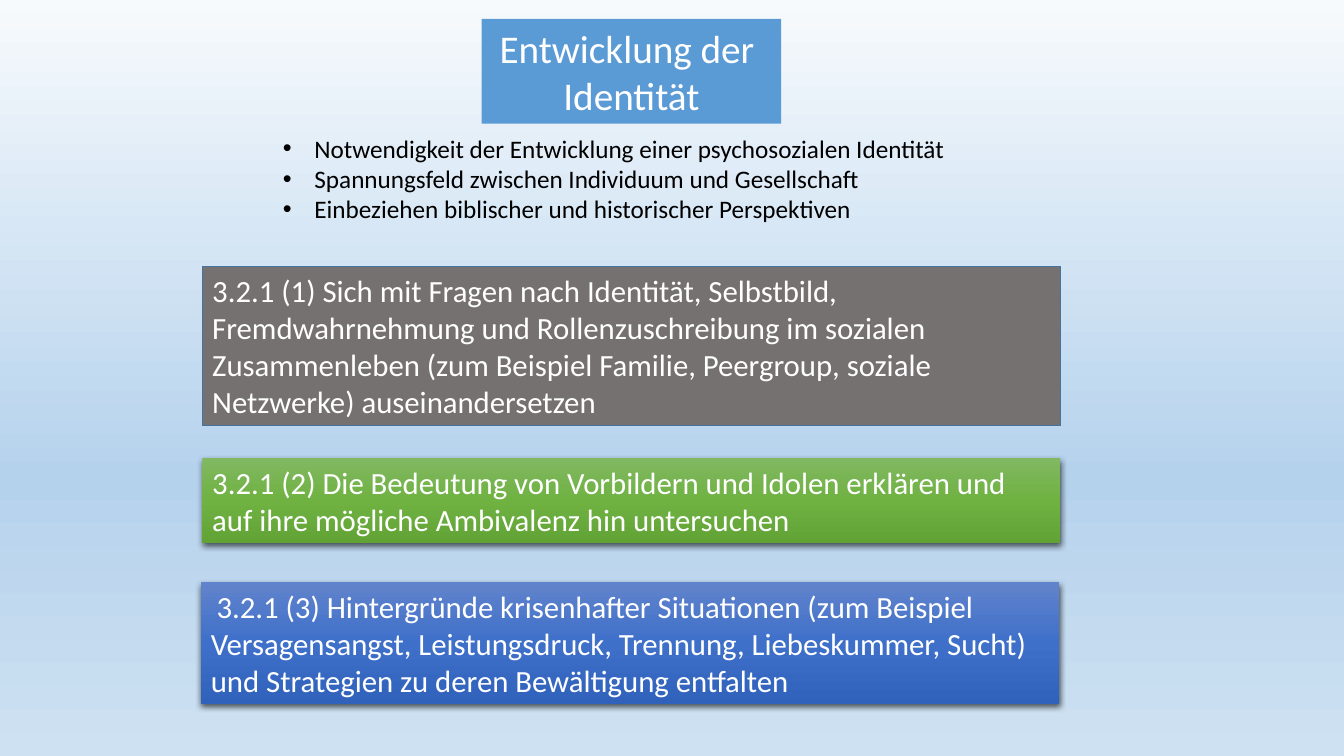
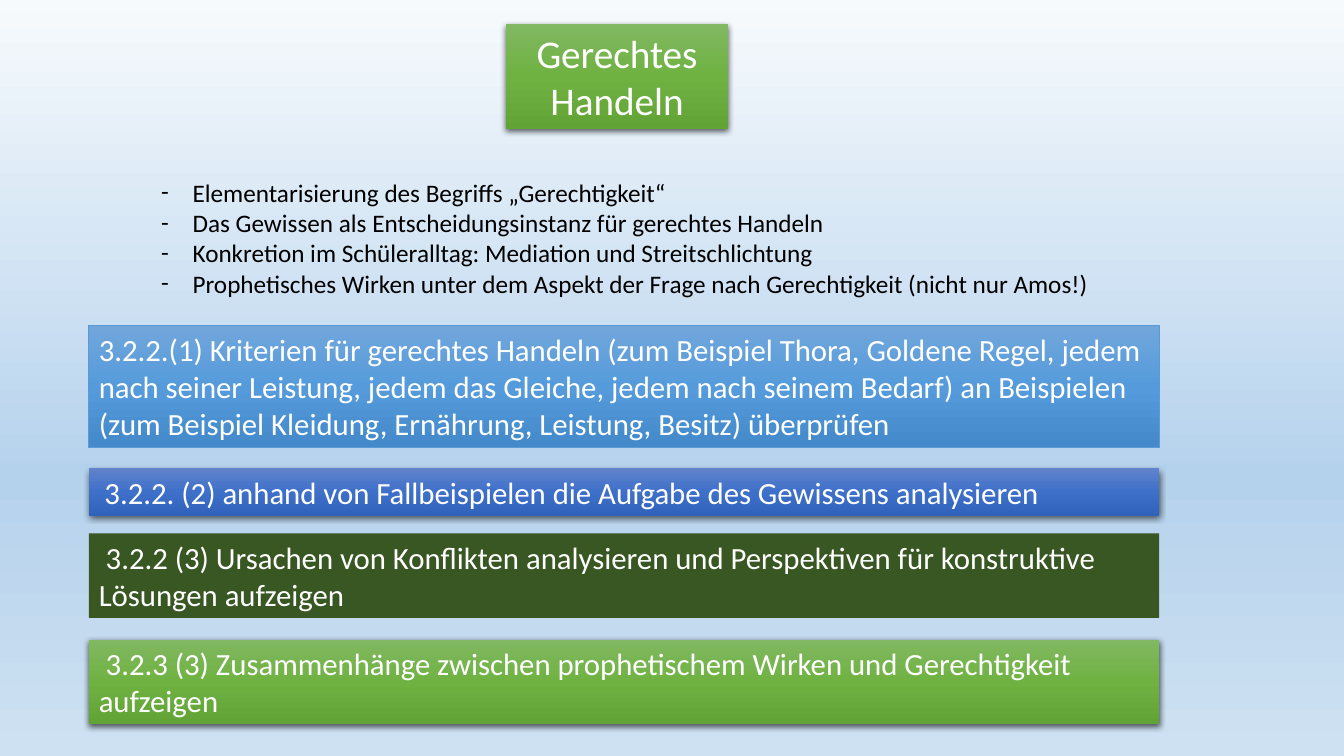
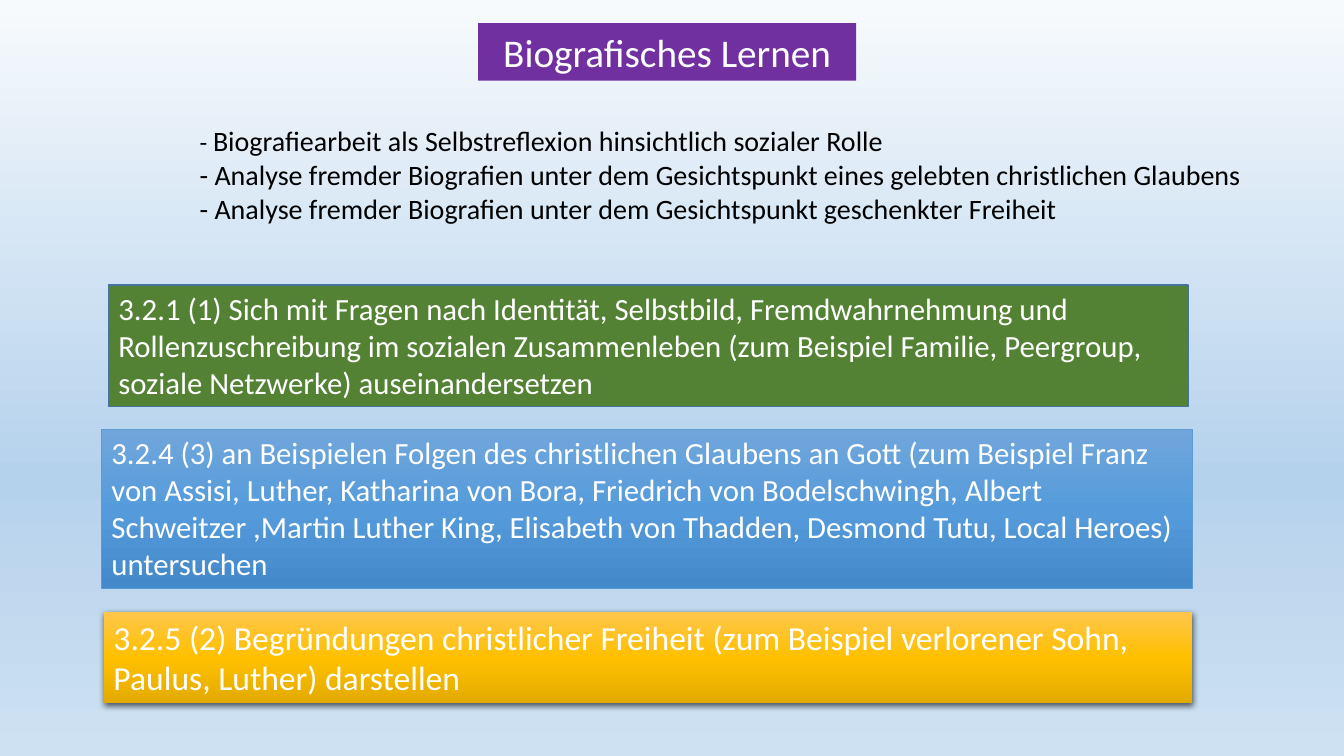
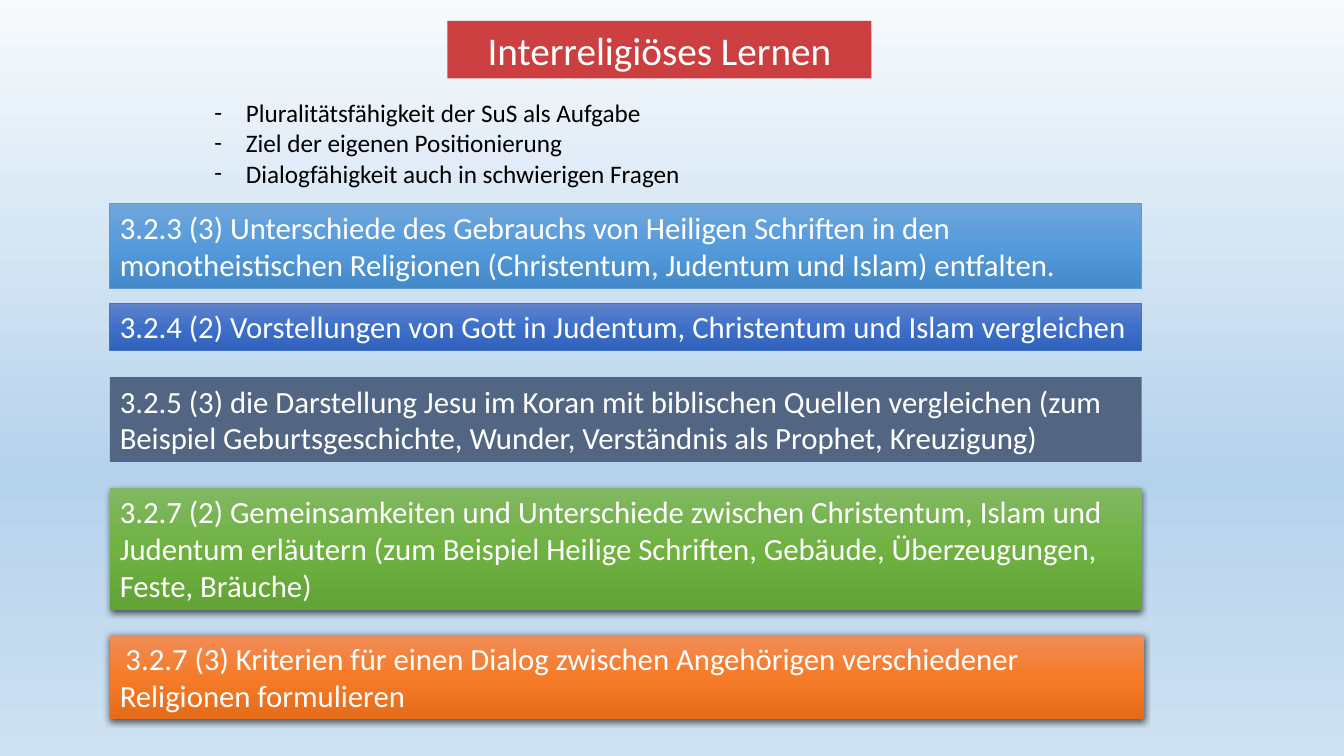
from lxml import etree
from pptx import Presentation
from pptx.dml.color import RGBColor
from pptx.enum.shapes import MSO_SHAPE as Shape
from pptx.enum.text import MSO_ANCHOR as Anchor, MSO_AUTO_SIZE as AutoSize, PP_ALIGN as Align
from pptx.oxml.ns import qn
from pptx.util import Pt

# Shared look
FONT, WHITE, BLACK = "Calibri", "FFFFFF", "000000"
TITLE_SIZE, BAND_SIZE, POINT_SIZE = 28, 22, 18
LINE_RATIO, PADDING, HANGING = 1.21, 7.2, 22.5
BACKGROUND = [(0, "F7FAFD"), (63, "B5D2EC"), (100, "CEE1F2")]
FRAME = {"word_wrap": True, "auto_size": AutoSize.SHAPE_TO_FIT_TEXT, "vertical_anchor": Anchor.TOP}


def gradient(top, middle, bottom):
    return [(0, top), (50, middle), (100, bottom)]


GREEN = {"fill": gradient("81B861", "6FB242", "62A336"), "shadow": True}
BLUE = {"fill": gradient("6183CB", "3E70CA", "3062BB"), "shadow": True}
FLAT_BLUE = {"fill": BLUE["fill"], "line": ("4472C4", 0.5)}
SKY = {"fill": gradient("71A6DB", "559BDB", "448ACA"), "line": ("5B9BD5", 0.5)}
GOLD = {"fill": gradient("FFC64B", "FFC000", "E3AB00"), "shadow": True}
ORANGE = {"fill": gradient("F18C57", "F67B28", "E56C19"), "shadow": True}
GREY = {"fill": "767171", "line": ("43739E", 1)}
LEAF = {"fill": "548235", "line": ("43739E", 1)}
FOREST, SLATE = {"fill": "385723"}, {"fill": "526582"}
AZURE, PURPLE = {"fill": "5B9BD5"}, {"fill": "7030A0"}
RED = {"fill": "C00000", "alpha": 74}


def color(value):
    return RGBColor.from_string(value)


def add_xml(parent, tag, **attributes):
    child = etree.SubElement(parent, qn(tag))
    for name, value in attributes.items():
        child.set(name, str(value))
    return child


def set_attributes(target, values):
    for name, value in values.items():
        setattr(target, name, value)


def text_height(lines, size):
    return lines * size * LINE_RATIO + PADDING


# Fills and shadow
def fill_gradient(fill, properties, stops):
    """Put a vertical gradient in place of the solid fill."""
    fill.solid()
    solid = properties.find(qn("a:solidFill"))
    element = etree.Element(qn("a:gradFill"), rotWithShape="1")
    stop_list = add_xml(element, "a:gsLst")
    for position, value in stops:
        stop = add_xml(stop_list, "a:gs", pos=position * 1000)
        add_xml(stop, "a:srgbClr", val=value)
    add_xml(element, "a:lin", ang=90 * 60000, scaled=0)
    properties.replace(solid, element)


def style_shape(shape, style):
    properties = shape._element.spPr
    if isinstance(style["fill"], list):
        fill_gradient(shape.fill, properties, style["fill"])
    else:
        shape.fill.solid()
        shape.fill.fore_color.rgb = color(style["fill"])
    if "alpha" in style:
        solid_color = properties.find(qn("a:solidFill"))[0]
        add_xml(solid_color, "a:alpha", val=style["alpha"] * 1000)
    if "line" in style:
        line_color, width = style["line"]
        shape.line.color.rgb = color(line_color)
        shape.line.width = Pt(width)
    else:
        shape.line.fill.background()
    shape.shadow.inherit = False
    if style.get("shadow"):
        shadow = add_xml(properties.find(qn("a:effectLst")), "a:outerShdw", blurRad=Pt(4.5),
                         dist=Pt(1.5), dir=90 * 60000, algn="ctr", rotWithShape=0)
        add_xml(add_xml(shadow, "a:srgbClr", val=BLACK), "a:alpha", val=63000)


# Text: a paragraph is a string or a list of (string, size) runs
def write_text(shape, paragraphs, size, text_color, align=Align.LEFT, bullet=None):
    frame = shape.text_frame
    set_attributes(frame, FRAME)
    for index, content in enumerate(paragraphs):
        paragraph = frame.add_paragraph() if index else frame.paragraphs[0]
        paragraph.alignment = align
        if bullet:
            properties = paragraph._p.get_or_add_pPr()
            properties.set("marL", str(Pt(HANGING)))
            properties.set("indent", str(-Pt(HANGING)))
            add_xml(properties, "a:buFont", typeface="Arial" if bullet == "•" else FONT)
            add_xml(properties, "a:buChar", char=bullet)
        runs = [(content, size)] if isinstance(content, str) else content
        for text, run_size in runs:
            run = paragraph.add_run()
            run.text = text
            set_attributes(run.font, {"name": FONT, "size": Pt(run_size)})
            run.font.color.rgb = color(text_color)


# Regions of a slide
def add_panel(slide, box, style, paragraphs, size, align=Align.LEFT):
    shape = slide.shapes.add_shape(Shape.RECTANGLE, *map(Pt, box))
    style_shape(shape, style)
    write_text(shape, paragraphs, size, WHITE, align)


def add_title(slide, left, top, width, style, paragraphs, lines=1):
    box = (left, top, width, text_height(lines, TITLE_SIZE))
    add_panel(slide, box, style, paragraphs, TITLE_SIZE, Align.CENTER)


def add_points(slide, left, top, width, paragraphs, bullet="-", size=POINT_SIZE):
    box = (left, top, width, text_height(len(paragraphs), size))
    shape = slide.shapes.add_textbox(*map(Pt, box))
    write_text(shape, paragraphs, size, BLACK, bullet=bullet)


def add_band(slide, left, top, width, lines, style, content, size=BAND_SIZE):
    add_panel(slide, (left, top, width, text_height(lines, size)), style, [content], size)


def spaced(text):
    """Lead in with a smaller space."""
    return [(" ", POINT_SIZE), (text, BAND_SIZE)]


# Slides
IDENTITY = ("3.2.1 (1) Sich mit Fragen nach Identität, Selbstbild, Fremdwahrnehmung und "
            "Rollenzuschreibung im sozialen Zusammenleben (zum Beispiel Familie, Peergroup, "
            "soziale Netzwerke) auseinandersetzen")

SLIDES = [
    {"title": (344, 13.5, 214, AZURE, ["Entwicklung der ", "Identität"], 2),
     "points": (195, 91.5, 508, [
         "Notwendigkeit der Entwicklung einer psychosozialen Identität",
         "Spannungsfeld zwischen Individuum und Gesellschaft",
         "Einbeziehen biblischer und historischer Perspektiven"], "•"),
     "bands": [
         (144.5, 190.5, 613, 4, GREY, IDENTITY),
         (144.5, 327.5, 613, 2, GREEN,
          "3.2.1 (2) Die Bedeutung von Vorbildern und Idolen erklären und auf ihre mögliche "
          "Ambivalenz hin untersuchen"),
         (143.5, 416, 613, 3, BLUE, spaced(
             "3.2.1 (3) Hintergründe krisenhafter Situationen (zum Beispiel Versagensangst, "
             "Leistungsdruck, Trennung, Liebeskummer, Sucht) und Strategien zu deren "
             "Bewältigung entfalten"))]},
    {"title": (361.5, 17.5, 158.5, GREEN, ["Gerechtes Handeln"], 2),
     "points": (108, 123, 685, [
         "Elementarisierung des Begriffs „Gerechtigkeit“",
         "Das Gewissen als Entscheidungsinstanz für gerechtes Handeln",
         "Konkretion im Schüleralltag: Mediation und Streitschlichtung",
         "Prophetisches Wirken unter dem Aspekt der Frage nach Gerechtigkeit (nicht nur Amos!)"]),
     "bands": [
         (63.5, 232.5, 764.5, 3, SKY,
          "3.2.2.(1) Kriterien für gerechtes Handeln (zum Beispiel Thora, Goldene Regel, jedem "
          "nach seiner Leistung, jedem das Gleiche, jedem nach seinem Bedarf) an Beispielen "
          "(zum Beispiel Kleidung, Ernährung, Leistung, Besitz) überprüfen"),
         (63.5, 334.5, 764.5, 1, BLUE, spaced(
             "3.2.2. (2) anhand von Fallbeispielen die Aufgabe des Gewissens analysieren")),
         (63.5, 381, 764.5, 2, FOREST,
          " 3.2.2 (3) Ursachen von Konflikten analysieren und Perspektiven für konstruktive "
          "Lösungen aufzeigen"),
         (63.5, 457, 764.5, 2, GREEN,
          " 3.2.3 (3) Zusammenhänge zwischen prophetischem Wirken und Gerechtigkeit "
          "aufzeigen")]},
    {"title": (341.5, 16.5, 270, PURPLE, ["Biografisches Lernen"]),
     "points": (135.5, 85, 763, [
         [("- ", 18), ("Biografiearbeit als Selbstreflexion hinsichtlich sozialer Rolle", 20)],
         "- Analyse fremder Biografien unter dem Gesichtspunkt eines gelebten christlichen Glaubens",
         "- Analyse fremder Biografien unter dem Gesichtspunkt geschenkter Freiheit"], None, 20),
     "bands": [
         (77.5, 203.5, 771, 3, LEAF, IDENTITY),
         (72.5, 306.5, 779, 4, SKY,
          "3.2.4 (3) an Beispielen Folgen des christlichen Glaubens an Gott (zum Beispiel Franz "
          "von Assisi, Luther, Katharina von Bora, Friedrich von Bodelschwingh, Albert "
          "Schweitzer ,Martin Luther King, Elisabeth von Thadden, Desmond Tutu, Local Heroes) "
          "untersuchen"),
         (74, 437, 777.5, 2, GOLD,
          "3.2.5 (2) Begründungen christlicher Freiheit (zum Beispiel verlorener Sohn, Paulus, "
          "Luther) darstellen", 24)]},
    {"title": (319.5, 15, 303, RED, ["Interreligiöses Lernen"]),
     "points": (146, 66, 713, [
         "Pluralitätsfähigkeit der SuS als Aufgabe",
         "Ziel der eigenen Positionierung",
         "Dialogfähigkeit auch in schwierigen Fragen"]),
     "bands": [
         (78.5, 145.5, 737, 2, SKY,
          "3.2.3 (3) Unterschiede des Gebrauchs von Heiligen Schriften in den "
          "monotheistischen Religionen (Christentum, Judentum und Islam) entfalten."),
         (78.5, 216.5, 737, 1, FLAT_BLUE,
          "3.2.4 (2) Vorstellungen von Gott in Judentum, Christentum und Islam vergleichen"),
         (78.5, 269.5, 737, 2, SLATE,
          "3.2.5 (3) die Darstellung Jesu im Koran mit biblischen Quellen vergleichen (zum "
          "Beispiel Geburtsgeschichte, Wunder, Verständnis als Prophet, Kreuzigung)"),
         (78.5, 348.5, 737, 3, GREEN,
          "3.2.7 (2) Gemeinsamkeiten und Unterschiede zwischen Christentum, Islam und Judentum "
          "erläutern (zum Beispiel Heilige Schriften, Gebäude, Überzeugungen, Feste, Bräuche)"),
         (78.5, 453.5, 739, 2, ORANGE, spaced(
             "3.2.7 (3) Kriterien für einen Dialog zwischen Angehörigen verschiedener "
             "Religionen formulieren"))]},
]


def add_topic_slide(presentation, topic):
    slide = presentation.slides.add_slide(presentation.slide_layouts[6])
    add_title(slide, *topic["title"])
    add_points(slide, *topic["points"])
    for band in topic["bands"]:
        add_band(slide, *band)


def main():
    presentation = Presentation()
    set_attributes(presentation, {"slide_width": Pt(960), "slide_height": Pt(540)})
    # The master carries the background of all slides
    master = presentation.slide_master
    fill = master.background.fill
    fill_gradient(fill, master._element.find(".//" + qn("p:bgPr")), BACKGROUND)
    for topic in SLIDES:
        add_topic_slide(presentation, topic)
    presentation.save("out.pptx")


if __name__ == "__main__":
    main()
